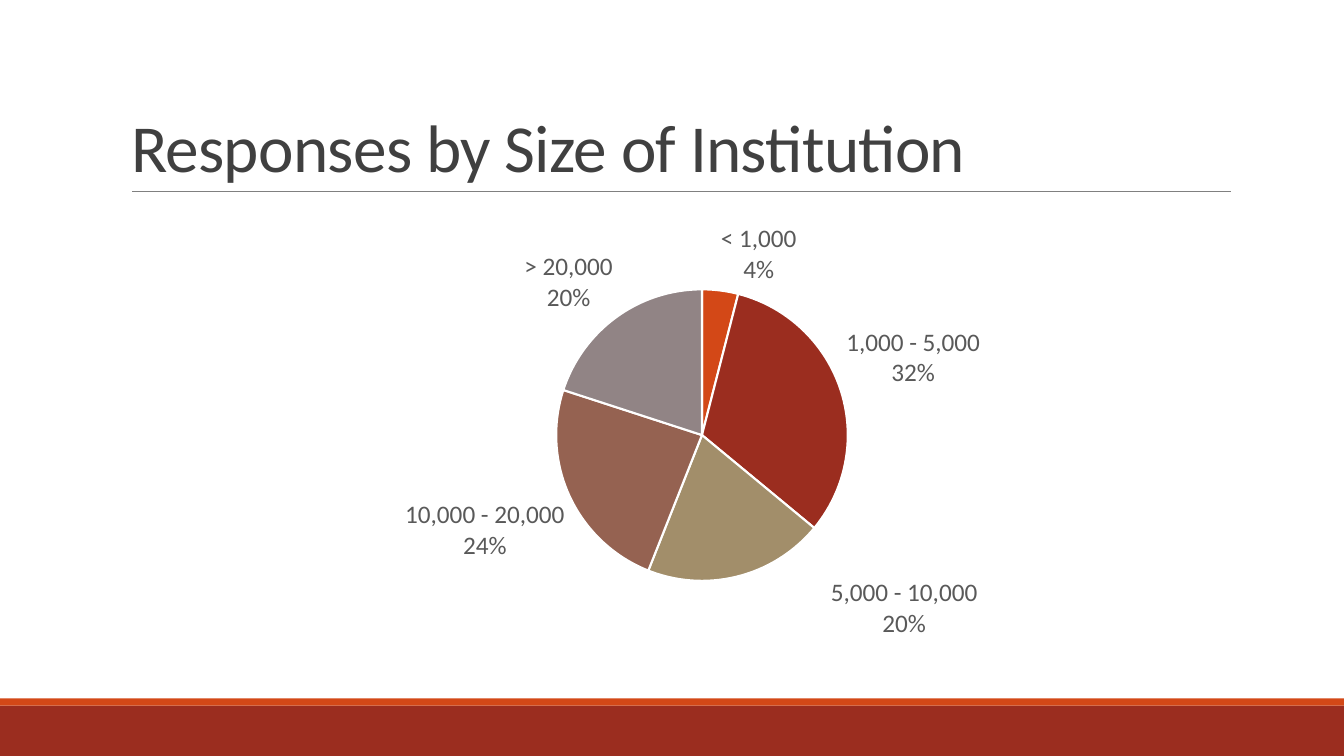
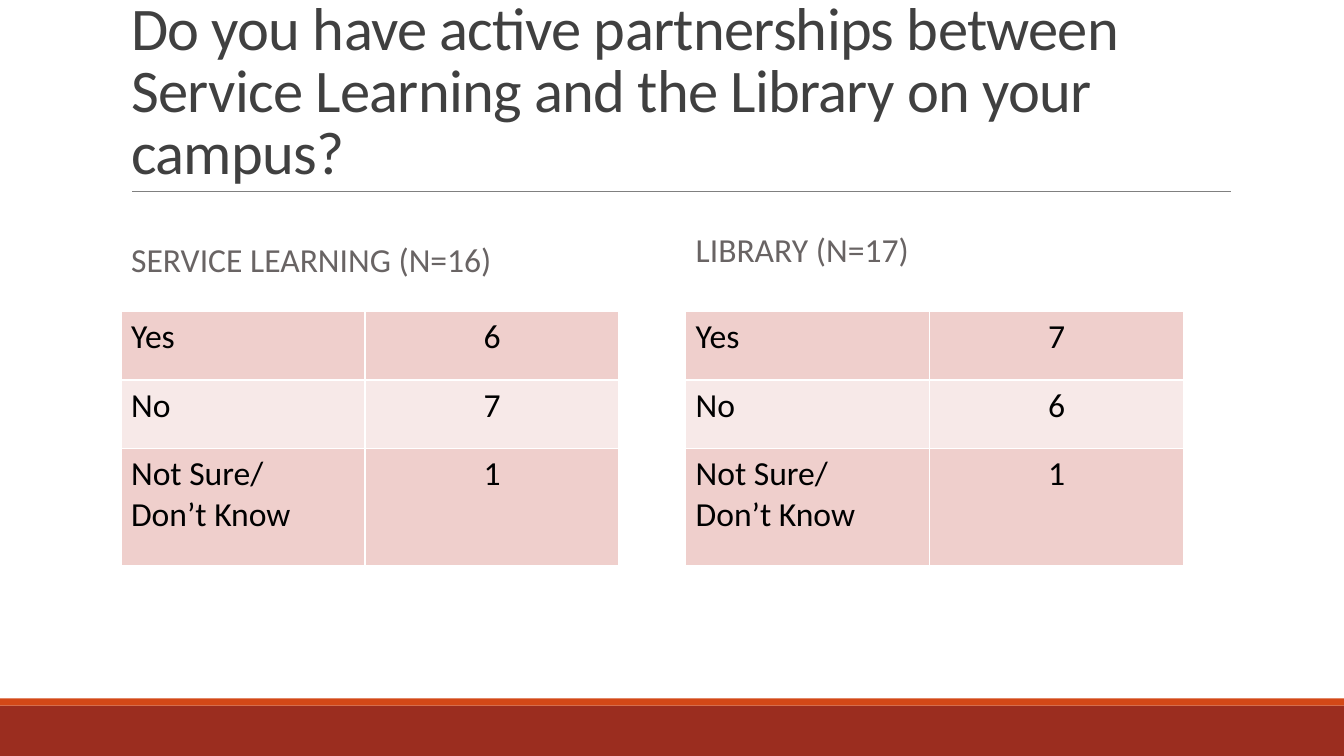
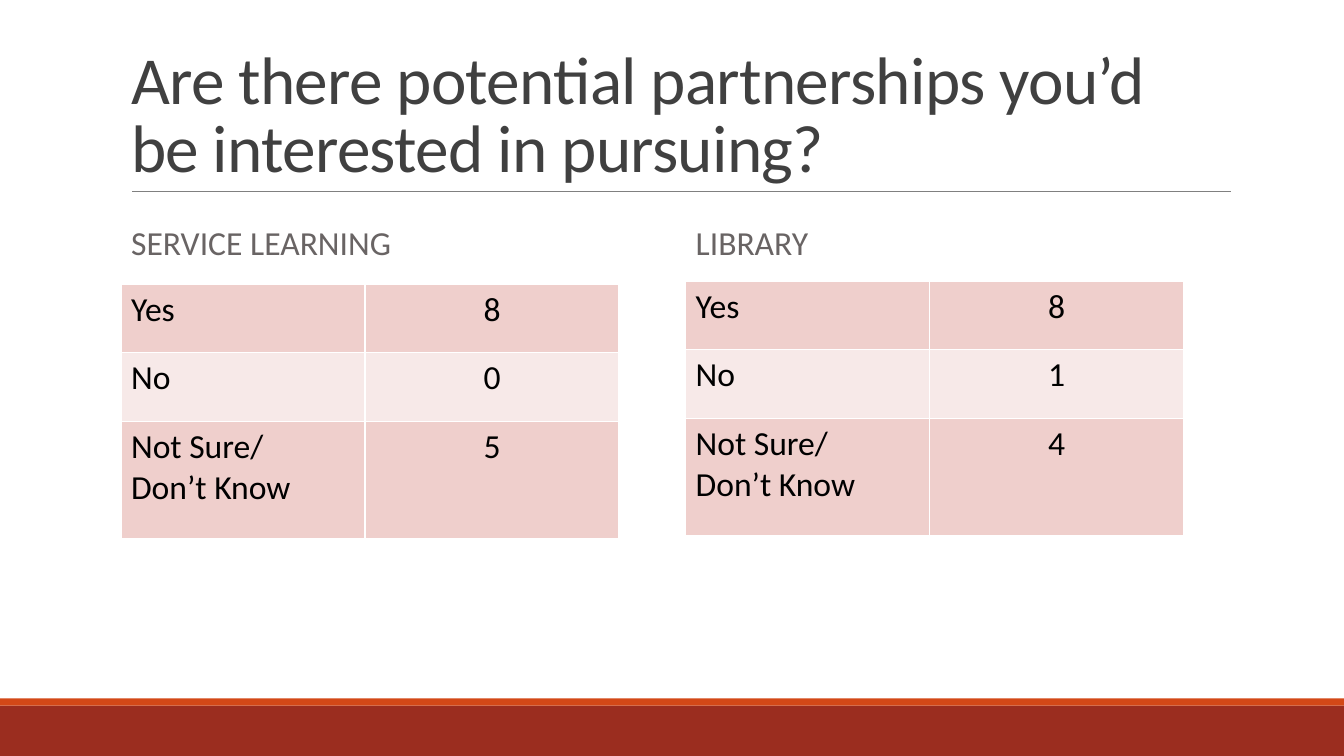
from dataclasses import dataclass

from pptx import Presentation
from pptx.chart.data import CategoryChartData
from pptx.dml.color import RGBColor
from pptx.enum.chart import XL_CHART_TYPE, XL_LABEL_POSITION
from pptx.enum.shapes import MSO_CONNECTOR, MSO_SHAPE
from pptx.enum.text import MSO_ANCHOR, MSO_AUTO_SIZE, PP_ALIGN
from pptx.oxml import parse_xml
from pptx.oxml.ns import nsdecls, qn
from pptx.util import Inches, Pt

PIE = XL_CHART_TYPE.PIE
OUTSIDE = XL_LABEL_POSITION.OUTSIDE_END
RECT = MSO_SHAPE.RECTANGLE
LINE = MSO_CONNECTOR.STRAIGHT
TOP, MIDDLE, BOTTOM = MSO_ANCHOR.TOP, MSO_ANCHOR.MIDDLE, MSO_ANCHOR.BOTTOM
LEFT, CENTER = PP_ALIGN.LEFT, PP_ALIGN.CENTER
FIXED = MSO_AUTO_SIZE.NONE


@dataclass(frozen=True)
class Theme:
    font: str = "Calibri"
    white: str = "FFFFFF"
    black: str = "000000"
    title: str = "404040"
    head: str = "696464"
    label: str = "595959"
    rule: str = "808080"
    band: str = "9B2D1F"
    strip: str = "D34817"
    rows: tuple = ("EFCFCC", "F7E9E8")
    slices: tuple = ("D34817", "9B2D1F", "A28E6A", "956251", "918485")
    title_size: float = 48
    long_size: float = 43.2
    text_size: float = 24
    label_size: float = 18


T = Theme()
WIDE, HIGH = 13.33, 7.5
EDGE, PITCH = 1.2, 5.6          # left of the first column, step to the next
HEAD_W, HEAD_H = 5.4, 0.81
TABLE_W, TABLE_H = 4.94, 2.52
COL_SHARES = (0.49, 0.51)
ROW_SHARES = (0.27, 0.27, 0.46)
TITLE_BOX = (EDGE, 0.31, 11, 1.59)
CHART_BOX = (EDGE, 2.07, 11.3, 4.45)
ANSWERS = ("Yes", "No", "Not Sure/\nDon’t Know")


def rgb(code):
    return RGBColor.from_string(code)


def inch(box):
    return [Inches(n) for n in box]


def move(shape, box):
    shape.left, shape.top, shape.width, shape.height = inch(box)


def style(font, size, color):
    font.name, font.size, font.bold = T.font, Pt(size), False
    font.color.rgb = rgb(color)


def put(frame, text, size=T.text_size, color=T.black, align=LEFT, anchor=TOP,
        line=None, before=None, after=None, track=None):
    """Write text into a frame, one paragraph for each line."""
    frame.text = text
    frame.word_wrap = True
    frame.vertical_anchor = anchor
    for para in frame.paragraphs:
        para.alignment, para.line_spacing = align, line
        para.space_before, para.space_after = before, after
        for run in para.runs:
            style(run.font, size, color)
            if track is not None:
                run.font._element.set("spc", str(round(track * 100)))


def frame_master(prs, slide):
    """Draw the bands and the title rule, then hand them to the master."""
    parts = []
    for top, high, color in ((7, 0.5, T.band), (6.93, 0.07, T.strip)):
        band = slide.shapes.add_shape(RECT, *inch((0, top, WIDE, high)))
        band.shadow.inherit = False
        band.fill.solid()
        band.fill.fore_color.rgb = rgb(color)
        band.line.fill.background()
        parts.append(band)
    rule = slide.shapes.add_connector(LINE, *inch((1.31, 1.9, 12.21, 1.9)))
    rule.line.color.rgb = rgb(T.rule)
    rule.line.width = Pt(0.5)
    rule.element.spPr.append(parse_xml(f"<a:effectLst {nsdecls('a')}/>"))
    parts.append(rule)
    tree = prs.slide_master.shapes.element
    for num, part in enumerate(parts, 101):
        part.element.xpath(".//p:cNvPr")[0].set("id", str(num))
        tree.append(part.element)


def add_title(slide, text, size):
    title = slide.shapes.title
    move(title, TITLE_BOX)
    put(title.text_frame, text, size=size, color=T.title, anchor=BOTTOM,
        line=0.85, before=Pt(0), after=Pt(0), track=-0.5)
    title.text_frame.auto_size = FIXED


def add_head(holder, text, left, top):
    move(holder, (left, top, HEAD_W, HEAD_H))
    put(holder.text_frame, text, color=T.head, anchor=MIDDLE,
        line=0.9, before=Pt(12), after=Pt(2))
    holder.text_frame.auto_size = FIXED


def edge_cell(cell):
    """Give a cell white borders on all sides."""
    props = cell._tc.get_or_add_tcPr()
    for num, side in enumerate("LRTB"):
        props.insert(num, parse_xml(
            f'<a:ln{side} {nsdecls("a")} w="12700"><a:solidFill>'
            f'<a:srgbClr val="{T.white}"/></a:solidFill></a:ln{side}>'))


def add_counts(slide, counts, left, top):
    box = inch((left, top, TABLE_W, TABLE_H))
    table = slide.shapes.add_table(len(ANSWERS), 2, *box).table
    table.first_row = table.horz_banding = False
    for col, share in zip(table.columns, COL_SHARES):
        col.width = Inches(TABLE_W * share)
    for row, share in zip(table.rows, ROW_SHARES):
        row.height = Inches(TABLE_H * share)
    for r, pair in enumerate(zip(ANSWERS, counts)):
        for c, (text, align) in enumerate(zip(pair, (LEFT, CENTER))):
            cell = table.cell(r, c)
            cell.fill.solid()
            cell.fill.fore_color.rgb = rgb(T.rows[r % 2])
            edge_cell(cell)
            put(cell.text_frame, str(text), align=align)


def layout_xml(**spots):
    tags = "".join(f'<c:{k} val="{v}"/>' for k, v in spots.items())
    return parse_xml(f"<c:layout {nsdecls('c')}><c:manualLayout>{tags}"
                     "</c:manualLayout></c:layout>")


def label_pie(series):
    """Label slices with name and percent, and shift the third label."""
    spot = series.points[2].data_label
    for label in (series.data_labels, spot):
        style(label.font, T.label_size, T.label)
        label.position = OUTSIDE
    root = series._element
    shows = dict(showLegendKey=0, showVal=0, showCatName=1, showSerName=0,
                 showPercent=1, showBubbleSize=0, showLeaderLines=0)
    for tag, val in shows.items():
        for node in root.xpath(f".//c:{tag}"):
            node.set("val", str(val))
    for node in root.xpath(".//c:showBubbleSize"):
        node.addnext(parse_xml(
            f"<c:separator {nsdecls('c')}>\n</c:separator>"))
    mark = root.xpath(".//c:dLbl/c:idx")[0]
    mark.addnext(layout_xml(x=0.08, y=-0.01))


def add_pie(slide, names, vals, box):
    data = CategoryChartData()
    data.categories = names
    data.add_series("Series 1", vals)
    chart = slide.shapes.add_chart(PIE, *inch(box), data).chart
    chart.has_title = chart.has_legend = False
    style(chart.font, 10, T.black)
    plot = chart.plots[0]
    plot.vary_by_categories = True
    series = plot.series[0]
    for num, color in enumerate(T.slices):
        look = series.points[num].format
        look.fill.solid()
        look.fill.fore_color.rgb = rgb(color)
        look.line.color.rgb = rgb(T.white)
        look.line.width = Pt(1.5)
    label_pie(series)
    area = chart._chartSpace.xpath(".//c:plotArea")[0]
    for old in area.findall(qn("c:layout")):
        area.remove(old)
    area.insert(0, layout_xml(layoutTarget="inner", xMode="edge",
                              yMode="edge", x=0.38, y=0.18, w=0.26, h=0.65))


def pie_slide(prs, title, names, vals):
    slide = prs.slides.add_slide(prs.slide_layouts[5])
    add_title(slide, title, T.title_size)
    add_pie(slide, names, vals, CHART_BOX)
    return slide


def pair_slide(prs, title, groups, size=T.title_size):
    """Set two headed tables side by side."""
    slide = prs.slides.add_slide(prs.slide_layouts[4])
    add_title(slide, title, size)
    holders = {h.placeholder_format.idx: h for h in slide.placeholders}
    for num, (head, head_top, counts, top) in enumerate(groups):
        left = EDGE + num * PITCH
        add_head(holders[1 + 2 * num], head, left, head_top)
        add_counts(slide, counts, left, top)
        spare = holders[2 + 2 * num].element
        spare.getparent().remove(spare)


def main():
    prs = Presentation()
    prs.slide_width, prs.slide_height = Inches(WIDE), Inches(HIGH)
    first = pie_slide(
        prs, "Responses by Size of Institution",
        ("< 1,000", "1,000 - 5,000", "5,000 - 10,000", "10,000 - 20,000",
         "> 20,000"), (4, 32, 20, 24, 20))
    frame_master(prs, first)
    pair_slide(
        prs, "Do you have active partnerships between Service Learning "
        "and the Library on your campus?",
        (("SERVICE LEARNING (N=16)", 2.19, (6, 7, 1), 3.09),
         ("LIBRARY (N=17)", 2.09, (7, 6, 1), 3.09)), size=T.long_size)
    pair_slide(
        prs, "Are there potential partnerships you’d be interested in "
        "pursuing?",
        (("SERVICE LEARNING", 2.02, (8, 0, 5), 2.82),
         ("LIBRARY", 2.02, (8, 1, 4), 2.79)))
    prs.save("out.pptx")


if __name__ == "__main__":
    main()
